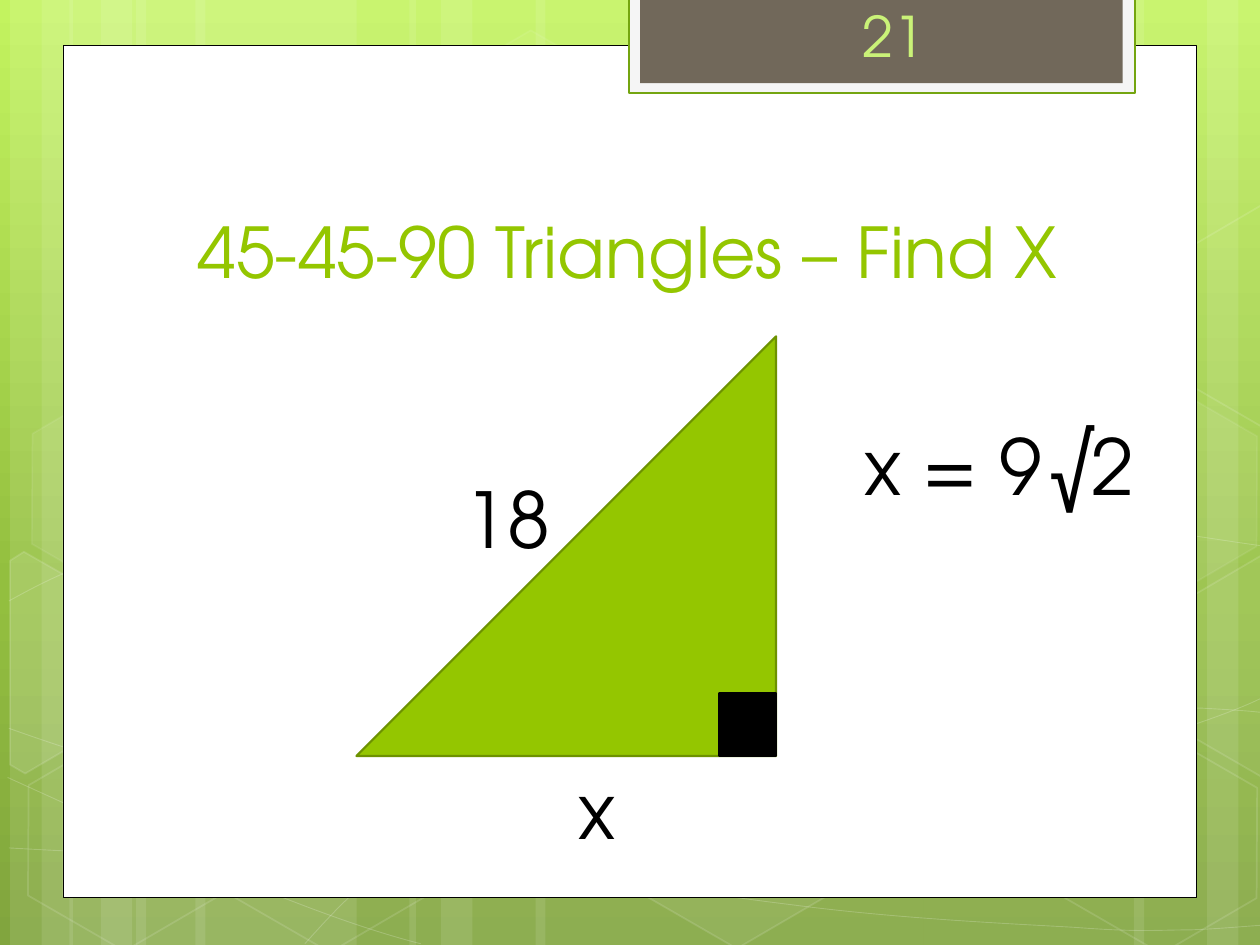
from copy import deepcopy
from typing import NamedTuple, Optional

from pptx import Presentation
from pptx.dml.color import RGBColor
from pptx.enum.shapes import MSO_SHAPE
from pptx.enum.text import MSO_ANCHOR, MSO_AUTO_SIZE, PP_ALIGN
from pptx.oxml.ns import qn
from pptx.oxml.xmlchemy import OxmlElement
from pptx.util import Pt

PX = 9144
FONT = "TeX Gyre Adventor"
WHITE, BLACK, GREEN = "FFFFFF", "000000", "94C600"


class Paint(NamedTuple):
    color: str
    alpha: int = 100


class Line(NamedTuple):
    color: str
    width: float
    alpha: int = 100


class Box(NamedTuple):
    x: int
    y: int
    w: int
    h: int


class Hexagon(NamedTuple):
    x: int
    y: int
    fill_alpha: int
    line_alpha: int


class Label(NamedTuple):
    text: str
    box: Box
    size: int
    color: str
    indent: int


STRIPES = [(108, 175), (8, 50), (33, 83), (155, 175), (55, 50), (80, 83),
           (733, 175), (958, 50), (900, 83), (425, 308), (325, 50), (350, 83)]

CURVES = [
    [(7, 673), (61, 676), (115, 679), (190, 678), (265, 677), (358, 675), (458, 665),
     (558, 655), (700, 636), (792, 617), (883, 598), (977, 568), (1007, 551)],
    [(7, 477), (36, 461), (65, 446), (121, 431), (178, 416), (259, 394), (347, 387),
     (436, 380), (544, 379), (654, 387), (764, 395), (947, 426), (1007, 434)],
    [(6, 617), (127, 672), (247, 727), (334, 749)],
    [(7, 578), (38, 589), (70, 600), (128, 616), (186, 631), (273, 656), (357, 673),
     (440, 690), (545, 708), (628, 718), (711, 729), (800, 733), (853, 736),
     (905, 740), (919, 738), (945, 738), (971, 737), (989, 735), (1007, 734)],
    [(242, 749), (260, 729), (278, 709), (302, 691), (326, 673), (360, 653), (388, 639),
     (416, 625), (433, 619), (470, 609), (506, 599), (573, 585), (608, 578),
     (644, 571), (649, 571), (680, 569), (711, 566), (760, 563), (794, 562),
     (829, 561), (886, 562), (886, 562), (908, 562), (931, 562), (953, 562),
     (971, 563), (988, 564), (997, 565), (1006, 566), (1003, 565), (1006, 566)],
]

HEXAGONS = [
    Hexagon(334, 36, 4, 8), Hexagon(497, 589, 6, 12), Hexagon(11, 591, 0, 12),
    Hexagon(14, 312, 7, 8), Hexagon(174, 592, 0, 12), Hexagon(753, 453, 10, 12),
    Hexagon(834, 593, 0, 12), Hexagon(834, 314, 7, 8),
]

CUT_HEXAGONS = [
    ([(8, 445), (19, 438), (96, 482), (95, 570), (20, 614), (8, 607)], 10),
    ([(926, 485), (1001, 441), (1009, 446), (1009, 613), (1002, 617), (926, 573)], 4),
    ([(926, 207), (1001, 163), (1010, 168), (1009, 335), (1002, 339), (926, 295)], 0),
]

LABELS = [
    Label("18", Box(325, 369, 142, 84), 44, BLACK, 44),
    Label("x", Box(415, 600, 100, 84), 44, BLACK, 44),
    Label("x = 9√2", Box(642, 327, 292, 84), 44, BLACK, 44),
    Label("21", Box(675, -4, 121, 64), 32, "CAF278", 10),
]


def rgb(color: str) -> RGBColor:
    return RGBColor.from_string(color)


def paint(fill, color: str, alpha: int) -> None:
    fill.solid()
    fill.fore_color.rgb = rgb(color)
    if alpha < 100:
        node = OxmlElement("a:alpha")
        node.set("val", str(alpha * 1000))
        fill._xPr.find(qn("a:solidFill"))[0].append(node)


def style(sp, fill: Optional[Paint], line: Optional[Line]) -> None:
    sp.shadow.inherit = False
    if fill and fill.alpha:
        paint(sp.fill, fill.color, fill.alpha)
    else:
        sp.fill.background()
    if line:
        sp.line.width = Pt(line.width)
        paint(sp.line.fill, line.color, line.alpha)
    else:
        sp.line.fill.background()


def add_shape(s, kind, box: Box, fill: Optional[Paint], line: Optional[Line] = None):
    sp = s.shapes.add_shape(kind, *(v * PX for v in box))
    style(sp, fill, line)
    return sp


def add_path(s, points: list, closed: bool, fill: Optional[Paint], line: Line):
    builder = s.shapes.build_freeform(*points[0], scale=PX)
    builder.add_line_segments(points[1:], close=closed)
    sp = builder.convert_to_shape()
    style(sp, fill, line)
    return sp


def add_curve(s, points: list) -> None:
    sp = add_path(s, points, False, None, Line(WHITE, 0.5, 20))
    segments = list(sp._element.iter(qn("a:lnTo")))
    for i in range(0, len(segments), 3):
        curve = OxmlElement("a:cubicBezTo")
        segments[i].addprevious(curve)
        for segment in segments[i:i + 3]:
            curve.append(segment[0])
            segment.getparent().remove(segment)


def format_text(tf, text: str, size: int, color: str) -> None:
    tf.text = text
    tf.word_wrap = True
    font = tf.paragraphs[0].runs[0].font
    font.name, font.size = FONT, Pt(size)
    font.color.rgb = rgb(color)


def add_label(s, label: Label) -> None:
    tf = s.shapes.add_textbox(*(v * PX for v in label.box)).text_frame
    format_text(tf, label.text, label.size, label.color)
    tf.margin_left = label.indent * PX
    tf.auto_size = MSO_AUTO_SIZE.SHAPE_TO_FIT_TEXT


def set_background(s) -> None:
    fill = s.background.fill
    fill.gradient()
    fill.gradient_angle = 270
    last = list(s._element.iter(qn("a:gs")))[-1]
    last.addnext(deepcopy(last))
    stops = [("C3F35F", 0), ("93BF3F", 0.62), ("81A53E", 1)]
    for stop, (color, position) in zip(fill.gradient_stops, stops):
        stop.color.rgb = rgb(color)
        stop.position = position


def add_backdrop(s) -> None:
    for x, w in STRIPES:
        add_shape(s, MSO_SHAPE.RECTANGLE, Box(x, 0, w, 750), Paint(WHITE, 10))
    for points in CURVES:
        add_curve(s, points)
    for h in HEXAGONS:
        sp = add_shape(s, MSO_SHAPE.HEXAGON, Box(h.x, h.y, 175, 152),
                       Paint(WHITE, h.fill_alpha), Line(WHITE, 1, h.line_alpha))
        sp.adjustments[0] = 0.285
        sp.rotation = 30
    for points, alpha in CUT_HEXAGONS:
        add_path(s, points, True, Paint(WHITE, alpha), Line(WHITE, 1, 12))
    add_shape(s, MSO_SHAPE.RECTANGLE, Box(50, 36, 900, 676), Paint(WHITE), Line(BLACK, 0.5))
    add_shape(s, MSO_SHAPE.RECTANGLE, Box(499, -2, 402, 76), Paint("F5F5F5"),
              Line("74A510", 1.25))
    add_shape(s, MSO_SHAPE.RECTANGLE, Box(508, -2, 383, 68), Paint("71685A"))


def add_title(s, title) -> None:
    title.left, title.top, title.width, title.height = (v * PX for v in (114, 112, 768, 125))
    s.shapes._spTree.append(title._element)
    tf = title.text_frame
    format_text(tf, "45-45-90 Triangles – Find X", 40, GREEN)
    tf.auto_size = MSO_AUTO_SIZE.NONE
    tf.vertical_anchor = MSO_ANCHOR.BOTTOM
    tf.paragraphs[0].alignment = PP_ALIGN.CENTER


def add_triangle(s) -> None:
    sp = add_shape(s, MSO_SHAPE.RIGHT_TRIANGLE, Box(283, 267, 333, 333), Paint(GREEN),
                   Line("6D9200", 1.25))
    sp._element.spPr.xfrm.set("flipH", "1")
    add_shape(s, MSO_SHAPE.RECTANGLE, Box(571, 550, 45, 50), Paint(BLACK), Line(BLACK, 1.25))


def main() -> None:
    """Build the 45-45-90 triangle slide."""
    prs = Presentation()
    prs.slide_width, prs.slide_height = 1000 * PX, 750 * PX
    s = prs.slides.add_slide(prs.slide_layouts[5])
    set_background(s)
    add_backdrop(s)
    add_title(s, s.shapes.title)
    add_triangle(s)
    for label in LABELS:
        add_label(s, label)
    prs.save("out.pptx")


if __name__ == "__main__":
    main()
